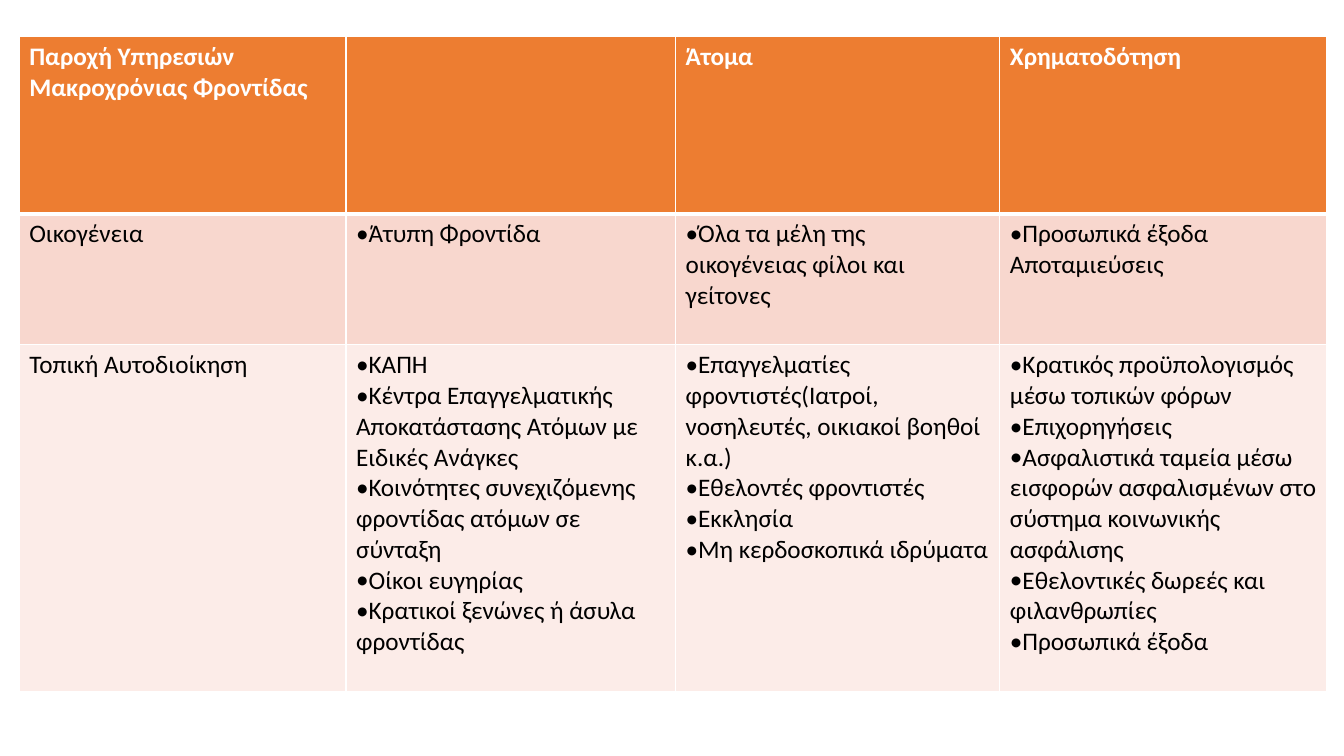
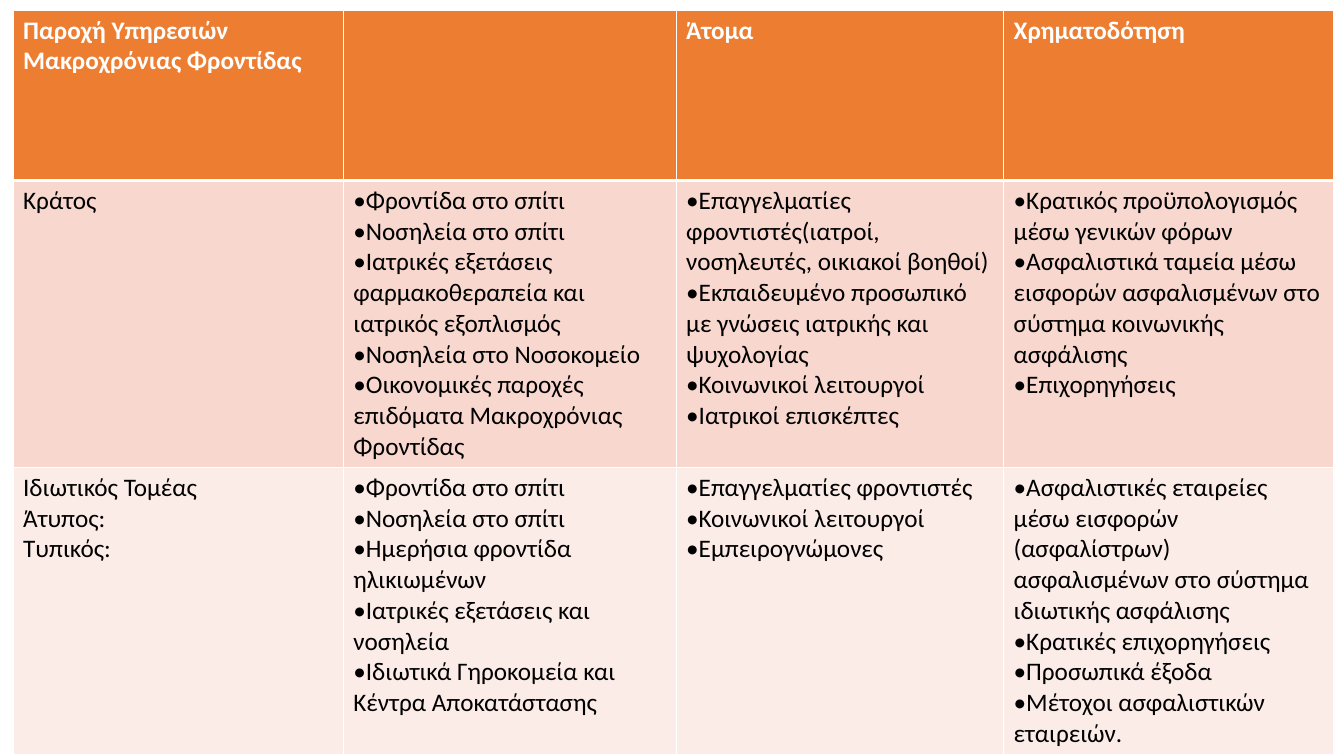
from lxml import etree
from pptx import Presentation
from pptx.dml.color import RGBColor
from pptx.oxml.ns import qn
from pptx.util import Inches, Pt

SLIDE_WIDTH, SLIDE_HEIGHT = 13.33, 7.5
BLANK_LAYOUT = 6
FONT = "Calibri"
TEXT_SIZE = 18
WHITE, BLACK = "FFFFFF", "000000"
HEADER_FILL = "ED7D31"
BAND_FILLS = ["F8D7CE", "FCECE8"]
COLUMN_SHARES = [0.25, 0.252, 0.248, 0.25]
BULLET = "•"

HEADER = [
    ["Παροχή Υπηρεσιών Μακροχρόνιας Φροντίδας"],
    [],
    ["Άτομα"],
    ["Χρηματοδότηση"],
]

FAMILY_AND_MUNICIPALITY = [
    [
        ["Οικογένεια"],
        ["•Άτυπη Φροντίδα"],
        ["•Όλα τα μέλη της οικογένειας φίλοι και γείτονες"],
        ["•Προσωπικά έξοδα", "Αποταμιεύσεις"],
    ],
    [
        ["Τοπική Αυτοδιοίκηση"],
        [
            "•ΚΑΠΗ",
            "•Κέντρα Επαγγελματικής Αποκατάστασης Ατόμων με Ειδικές Ανάγκες",
            "•Κοινότητες συνεχιζόμενης φροντίδας ατόμων σε σύνταξη",
            "•Οίκοι ευγηρίας",
            "•Κρατικοί ξενώνες ή άσυλα φροντίδας",
        ],
        [
            "•Επαγγελματίες φροντιστές(Ιατροί, νοσηλευτές, οικιακοί βοηθοί κ.α.)",
            "•Εθελοντές φροντιστές",
            "•Εκκλησία",
            "•Μη κερδοσκοπικά ιδρύματα",
        ],
        [
            "•Κρατικός προϋπολογισμός μέσω τοπικών φόρων",
            "•Επιχορηγήσεις",
            "•Ασφαλιστικά ταμεία μέσω εισφορών ασφαλισμένων στο σύστημα κοινωνικής ασφάλισης",
            "•Εθελοντικές δωρεές και φιλανθρωπίες",
            "•Προσωπικά έξοδα",
        ],
    ],
]

STATE_AND_PRIVATE_SECTOR = [
    [
        ["Κράτος"],
        [
            "•Φροντίδα στο σπίτι",
            "•Νοσηλεία στο σπίτι",
            "•Ιατρικές εξετάσεις φαρμακοθεραπεία και ιατρικός εξοπλισμός",
            "•Νοσηλεία στο Νοσοκομείο",
            "•Οικονομικές παροχές επιδόματα Μακροχρόνιας Φροντίδας",
        ],
        [
            "•Επαγγελματίες φροντιστές(ιατροί, νοσηλευτές, οικιακοί βοηθοί)",
            "•Εκπαιδευμένο προσωπικό με γνώσεις ιατρικής και ψυχολογίας",
            "•Κοινωνικοί λειτουργοί",
            "•Ιατρικοί επισκέπτες",
        ],
        [
            "•Κρατικός προϋπολογισμός μέσω γενικών φόρων",
            "•Ασφαλιστικά ταμεία μέσω εισφορών ασφαλισμένων στο σύστημα κοινωνικής ασφάλισης",
            "•Επιχορηγήσεις",
        ],
    ],
    [
        ["Ιδιωτικός Τομέας", "Άτυπος:", "Τυπικός:"],
        [
            "•Φροντίδα στο σπίτι",
            "•Νοσηλεία στο σπίτι",
            "•Ημερήσια φροντίδα ηλικιωμένων",
            "•Ιατρικές εξετάσεις και νοσηλεία",
            "•Ιδιωτικά Γηροκομεία και Κέντρα Αποκατάστασης",
        ],
        [
            "•Επαγγελματίες φροντιστές",
            "•Κοινωνικοί λειτουργοί",
            "•Εμπειρογνώμονες",
        ],
        [
            "•Ασφαλιστικές εταιρείες μέσω εισφορών (ασφαλίστρων) ασφαλισμένων στο σύστημα "
            "ιδιωτικής ασφάλισης",
            "•Κρατικές επιχορηγήσεις",
            "•Προσωπικά έξοδα",
            "•Μέτοχοι ασφαλιστικών εταιρειών.",
        ],
    ],
]


def color(hex_string):
    """Turn a hex string into a colour."""
    return RGBColor.from_string(hex_string)


def add_bullet(paragraph):
    """Give a paragraph a bullet that sits flush with its wrapped lines."""
    properties = paragraph._p.get_or_add_pPr()
    properties.set("marL", "0")
    properties.set("indent", "0")
    etree.SubElement(properties, qn("a:buFont"), typeface=FONT)
    etree.SubElement(properties, qn("a:buChar"), char=BULLET)


def set_borders(cell, top, bottom):
    """Draw white cell borders, with top and bottom widths in points."""
    properties = cell._tc.get_or_add_tcPr()
    for side, width in (("L", 1), ("R", 1), ("T", top), ("B", bottom)):
        line = etree.SubElement(properties, qn(f"a:ln{side}"), w=str(Pt(width)))
        fill = etree.SubElement(line, qn("a:solidFill"))
        etree.SubElement(fill, qn("a:srgbClr"), val=WHITE)


def write_lines(cell, lines, text_color, bold):
    """Write one paragraph per line, turning a leading mark into a bullet."""
    frame = cell.text_frame
    frame.text = "\n".join(line.removeprefix(BULLET) for line in lines)
    for paragraph, line in zip(frame.paragraphs, lines):
        if line.startswith(BULLET):
            add_bullet(paragraph)
        for span in paragraph.runs:
            span.font.name = FONT
            span.font.size = Pt(TEXT_SIZE)
            span.font.bold = bold
            span.font.color.rgb = color(text_color)


def fill_row(table, index, contents):
    """Fill and format a table row as the header or as a band."""
    is_header = index == 0
    fill = HEADER_FILL if is_header else BAND_FILLS[(index - 1) % len(BAND_FILLS)]
    for cell, lines in zip(table.rows[index].cells, contents):
        set_borders(cell, top=3 if index == 1 else 1, bottom=3 if is_header else 1)
        cell.fill.solid()
        cell.fill.fore_color.rgb = color(fill)
        write_lines(cell, lines, WHITE if is_header else BLACK, is_header)


def add_care_slide(deck, body, left, top, width, row_heights):
    """Add a slide holding one table of care providers."""
    page = deck.slides.add_slide(deck.slide_layouts[BLANK_LAYOUT])
    rows = [HEADER] + body
    table = page.shapes.add_table(
        len(rows), len(HEADER), Inches(left), Inches(top),
        Inches(width), Inches(sum(row_heights)),
    ).table
    for column, share in zip(table.columns, COLUMN_SHARES):
        column.width = Inches(width * share)
    for index, (contents, height) in enumerate(zip(rows, row_heights)):
        table.rows[index].height = Inches(height)
        fill_row(table, index, contents)


def main():
    """Build and save the deck."""
    deck = Presentation()
    deck.slide_width = Inches(SLIDE_WIDTH)
    deck.slide_height = Inches(SLIDE_HEIGHT)
    add_care_slide(deck, FAMILY_AND_MUNICIPALITY, 0.19, 0.36, 12.97, [1.76, 1.3, 3.44])
    add_care_slide(deck, STATE_AND_PRIVATE_SECTOR, 0.13, 0.1, 13.1, [1.69, 2.84, 2.84])
    deck.save("out.pptx")


if __name__ == "__main__":
    main()
